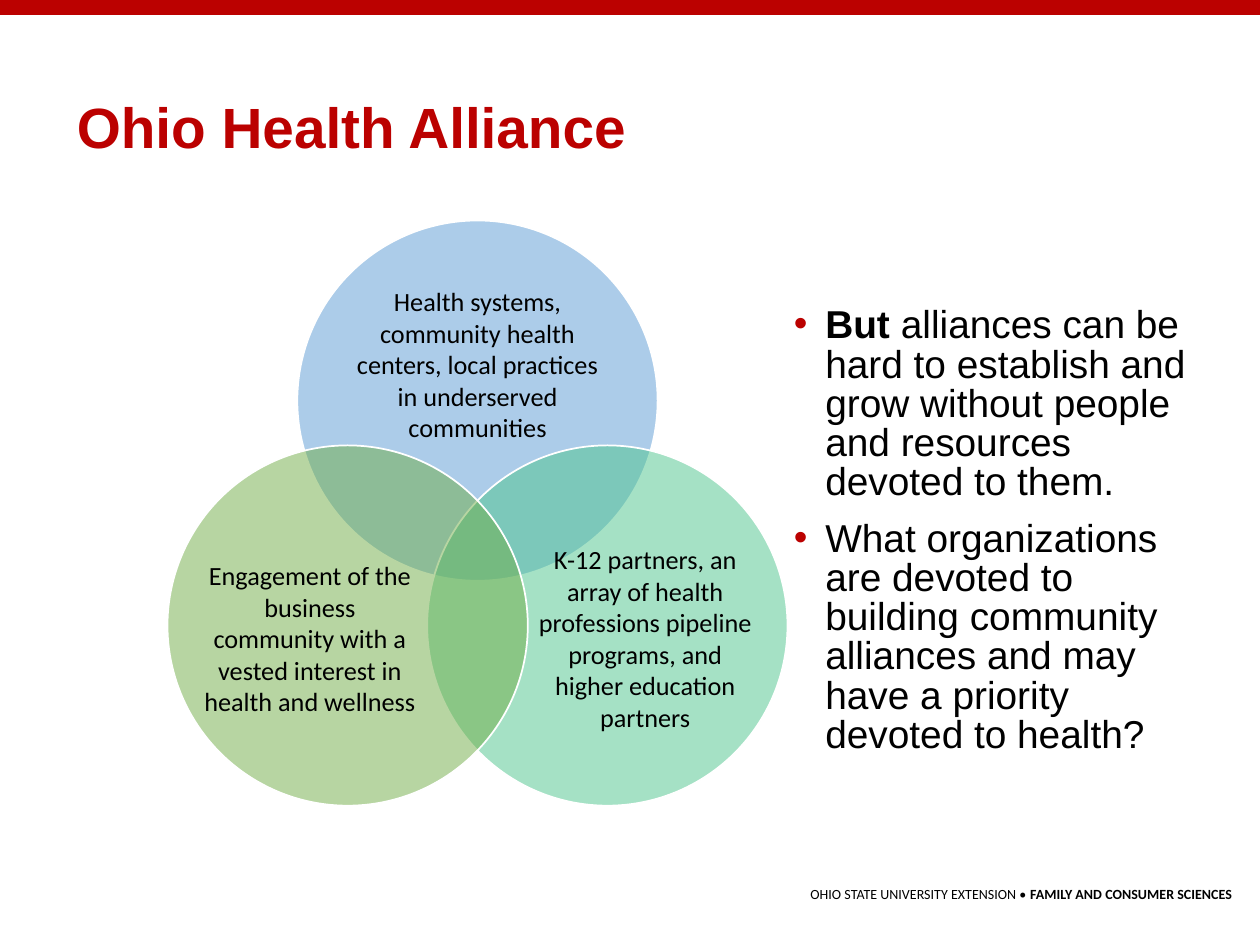
"""Build the Ohio Health Alliance slide: a three-circle Venn diagram beside a bulleted list."""
from math import cos, radians, sin

from lxml import etree
from pptx import Presentation
from pptx.dml.color import RGBColor
from pptx.enum.shapes import MSO_CONNECTOR, MSO_SHAPE
from pptx.enum.text import MSO_ANCHOR, MSO_AUTO_SIZE, PP_ALIGN
from pptx.oxml.ns import qn
from pptx.util import Inches, Pt

STRAIGHT = MSO_CONNECTOR.STRAIGHT
OVAL = MSO_SHAPE.OVAL
TOP, MIDDLE = MSO_ANCHOR.TOP, MSO_ANCHOR.MIDDLE
LEFT, CENTER, RIGHT = PP_ALIGN.LEFT, PP_ALIGN.CENTER, PP_ALIGN.RIGHT
NO_FIT = MSO_AUTO_SIZE.NONE
SCARLET, BLACK, WHITE = "BB0100", "000000", "FFFFFF"


def color(value):
    return RGBColor.from_string(value)


def style(font, name, size, value, bold=False):
    font.name, font.size, font.bold = name, Pt(size), bold
    font.color.rgb = color(value)


deck = Presentation()
deck.slide_width, deck.slide_height = Inches(10), Inches(7.5)
page = deck.slides.add_slide(deck.slide_layouts[1])
title, body = page.placeholders

bar = page.shapes.add_connector(STRAIGHT, 0, Inches(0.06), deck.slide_width, Inches(0.06))
bar.line.color.rgb = color(SCARLET)
bar.line.width = Pt(9)
etree.SubElement(bar._element.spPr, qn("a:effectLst"))

footer = page.shapes.add_textbox(Inches(4.61), Inches(6.98), Inches(5.27), Inches(0.24))
footer.text_frame.word_wrap = True
para = footer.text_frame.paragraphs[0]
para.alignment = RIGHT
for words, bold in (("OHIO STATE UNIVERSITY EXTENSION • ", False),
                    ("FAMILY AND CONSUMER SCIENCES", True)):
    span = para.add_run()
    span.text = words
    style(span.font, "Calibri", 8, BLACK, bold)

title.left, title.top, title.width, title.height = map(Inches, (0.51, 0.74, 8.8, 0.94))
title.text_frame.text = "Ohio Health Alliance"
title.text_frame.vertical_anchor = TOP
title.text_frame.auto_size = NO_FIT
para = title.text_frame.paragraphs[0]
para.alignment, para.line_spacing = LEFT, 0.9
style(para.runs[0].font, "Arial", 32.4, SCARLET, True)

center_x, center_y, orbit, diameter = 3.79, 4.37, 1.19, 2.86
circles = (
    (-90, "5B9BD5", 0, -0.29, 2.09, 1.28,
     "Health systems, community health centers, local practices in underserved communities"),
    (30, "4DC58D", 0.3, 0.1, 1.71, 1.57,
     "K-12 partners, an array of health professions pipeline programs, and higher education partners"),
    (150, "70AD47", -0.3, 0.1, 1.71, 1.57,
     "Engagement of the business community with a vested interest in health and wellness"),
)
venn = page.shapes.add_group_shape()
for angle, fill, shift_x, shift_y, width, height, words in circles:
    x = center_x + orbit * cos(radians(angle))
    y = center_y + orbit * sin(radians(angle))
    circle = venn.shapes.add_shape(OVAL, Inches(x - diameter / 2), Inches(y - diameter / 2),
                                   Inches(diameter), Inches(diameter))
    circle.shadow.inherit = False
    circle.fill.solid()
    circle.fill.fore_color.rgb = color(fill)
    shade = circle._element.spPr.find(qn("a:solidFill"))[0]
    etree.SubElement(shade, qn("a:alpha"), val="50000")
    circle.line.color.rgb = color(WHITE)
    circle.line.width = Pt(1)

    label = venn.shapes.add_textbox(Inches(x + shift_x - width / 2), Inches(y + shift_y - height / 2),
                                    Inches(width), Inches(height))
    frame = label.text_frame
    frame.word_wrap, frame.vertical_anchor = True, MIDDLE
    frame.margin_left = frame.margin_right = frame.margin_top = frame.margin_bottom = 0
    frame.text = words
    frame.paragraphs[0].alignment = CENTER
    style(frame.paragraphs[0].runs[0].font, "Calibri", 15, BLACK)

body.left, body.top, body.width, body.height = map(Inches, (6.2, 2.39, 3.52, 4.09))
frame = body.text_frame
frame.auto_size, frame.vertical_anchor = NO_FIT, TOP
points = (
    (("But", True),
     (" alliances can be hard to establish and grow without people and resources devoted to them.", False)),
    (("What organizations are devoted to building community alliances and may have a priority "
      "devoted to health?", False),),
)
for index, point in enumerate(points):
    para = frame.add_paragraph() if index else frame.paragraphs[0]
    para.line_spacing, para.space_before = 0.84, Pt(10 if index else 0)
    layout = para._p.get_or_add_pPr()
    layout.set("marL", str(Inches(0.25)))
    layout.set("indent", str(-Inches(0.25)))
    tint = etree.SubElement(layout, qn("a:buClr"))
    etree.SubElement(tint, qn("a:srgbClr"), val=SCARLET)
    etree.SubElement(layout, qn("a:buFont"), typeface="Arial")
    etree.SubElement(layout, qn("a:buChar"), char="•")
    for words, bold in point:
        span = para.add_run()
        span.text = words
        style(span.font, "Arial", 22.2, BLACK, bold)

deck.save("out.pptx")
